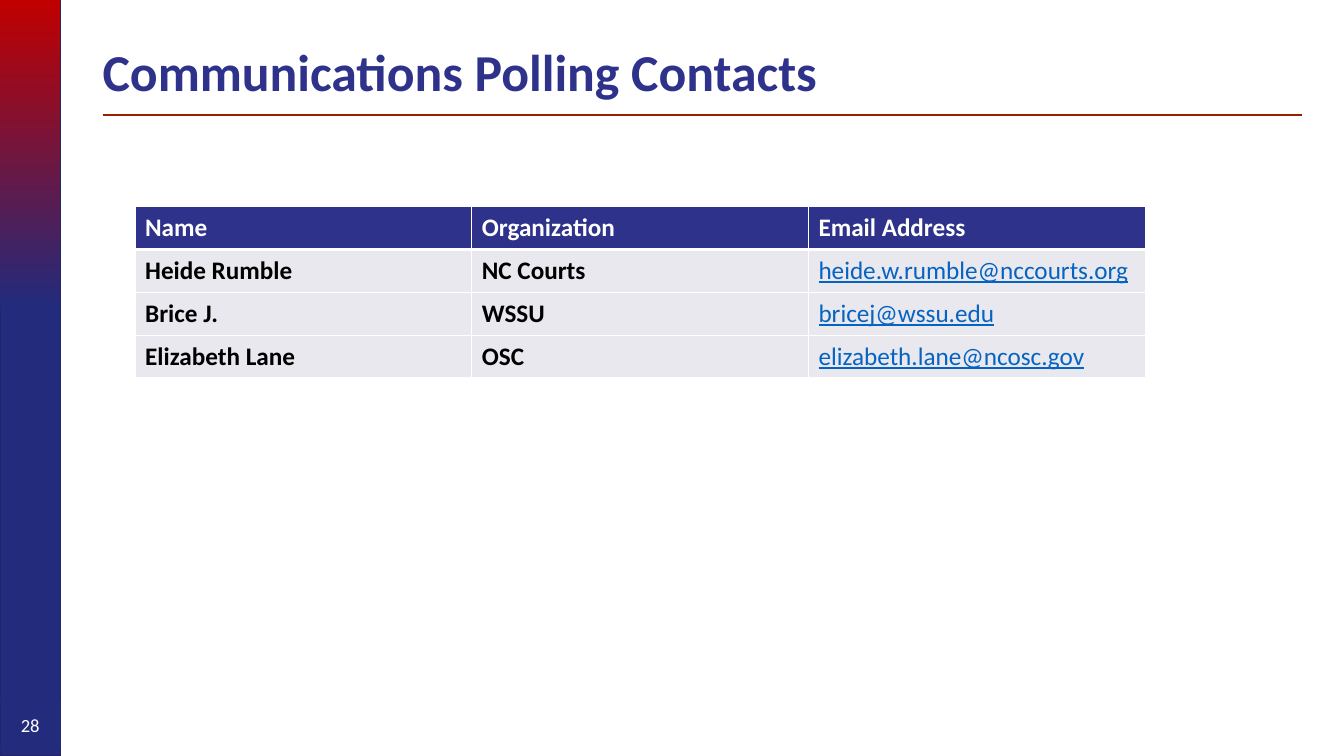
from dataclasses import dataclass
from typing import Any

from lxml.etree import SubElement
from pptx import Presentation
from pptx.dml.color import RGBColor
from pptx.enum.shapes import MSO_CONNECTOR, MSO_SHAPE
from pptx.enum.text import MSO_ANCHOR, PP_ALIGN
from pptx.oxml.ns import qn
from pptx.util import Pt

FONT = "Calibri"
WHITE, BLACK = "FFFFFF", "000000"
NAVY, BLUE, EDGE = "232B7C", "2E328B", "222567"
RED, RUST, LINK, GREY = "C00000", "972200", "0563C1", "E8E8EE"
BAR = 43.2

TITLE = {"name": FONT, "size": Pt(37), "bold": True}
BOLD = {"name": FONT, "size": Pt(18), "bold": True}
MAIL = {"name": FONT, "size": Pt(18), "bold": False, "underline": True}
PAGE = {"name": FONT, "size": Pt(13.3)}

ROWS = [
    ("Name", "Organization", "Email Address"),
    ("Heide Rumble", "NC Courts", "heide.w.rumble@nccourts.org"),
    ("Brice J.", "WSSU", "bricej@wssu.edu"),
    ("Elizabeth Lane", "OSC", "elizabeth.lane@ncosc.gov"),
]


@dataclass
class Block:
    top: float
    height: float
    fills: tuple[str, ...] = ()
    line: str = ""
    width: float = 1


BLOCKS = [
    Block(0, 540, (NAVY,), EDGE),
    Block(0, 218.9, (RED, NAVY)),
    Block(501.1, 33.8, (), NAVY, 0.75),
]


def tint(code: str) -> RGBColor:
    return RGBColor.from_string(code)


def apply(thing: Any, form: dict[str, Any]) -> None:
    for key, value in form.items():
        setattr(thing, key, value)


def write(frame: Any, text: str, form: dict[str, Any], hue: str) -> Any:
    para = frame.paragraphs[0]
    run = para.add_run()
    run.text = text
    apply(run.font, form)
    run.font.color.rgb = tint(hue)
    return para


def draw_block(slide: Any, block: Block) -> Any:
    shape = slide.shapes.add_shape(
        MSO_SHAPE.RECTANGLE, 0, Pt(block.top), Pt(BAR), Pt(block.height))
    shape.shadow.inherit = False
    if len(block.fills) > 1:
        shape.fill.gradient()
        shape.fill.gradient_angle = 270
        for stop, hue in zip(shape.fill.gradient_stops, block.fills):
            stop.color.rgb = tint(hue)
    elif block.fills:
        shape.fill.solid()
        shape.fill.fore_color.rgb = tint(block.fills[0])
    else:
        shape.fill.background()
    if block.line:
        shape.line.color.rgb = tint(block.line)
        shape.line.width = Pt(block.width)
    else:
        shape.line.fill.background()
    return shape


def draw_title(slide: Any) -> None:
    rule = slide.shapes.add_connector(
        MSO_CONNECTOR.STRAIGHT, Pt(73.4), Pt(82.1), Pt(930.2), Pt(82.1))
    rule.line.color.rgb = tint(RUST)
    rule.line.width = Pt(1.5)
    SubElement(rule._element.spPr, qn("a:effectLst"))

    box = slide.shapes.add_textbox(Pt(66.2), Pt(28.8), Pt(864), Pt(49.7))
    frame = box.text_frame
    apply(frame, {"word_wrap": True, "vertical_anchor": MSO_ANCHOR.MIDDLE})
    para = write(frame, "Communications Polling Contacts", TITLE, BLUE)
    para.line_spacing = 0.9


def draw_edge(cell: Any, side: str, width: float) -> None:
    line = SubElement(cell._tc.get_or_add_tcPr(), qn(f"a:ln{side}"),
                      w=str(Pt(width)))
    fill = SubElement(line, qn("a:solidFill"))
    SubElement(fill, qn("a:srgbClr"), val=WHITE)


def draw_cell(cell: Any, text: str, row: int, col: int) -> None:
    head = row == 0
    mail = col == 2 and not head
    widths = {"L": 1, "R": 1, "T": 3 if row == 1 else 1, "B": 3 if head else 1}
    for side, width in widths.items():
        draw_edge(cell, side, width)
    cell.fill.solid()
    cell.fill.fore_color.rgb = tint(BLUE if head else GREY)
    cell.vertical_anchor = MSO_ANCHOR.MIDDLE
    hue = WHITE if head else LINK if mail else BLACK
    write(cell.text_frame, text, MAIL if mail else BOLD, hue)


def draw_table(slide: Any) -> None:
    table = slide.shapes.add_table(
        len(ROWS), 3, Pt(96.5), Pt(147.6), Pt(721.5), Pt(122.4)).table
    table.horz_banding = False
    for col in table.columns:
        col.width = Pt(240.5)
    for row, texts in enumerate(ROWS):
        table.rows[row].height = Pt(30.6)
        for col, text in enumerate(texts):
            draw_cell(table.cell(row, col), text, row, col)


def main() -> None:
    deck = Presentation()
    apply(deck, {"slide_width": Pt(960), "slide_height": Pt(540)})
    slide = deck.slides.add_slide(deck.slide_layouts[6])
    shapes = [draw_block(slide, block) for block in BLOCKS]
    frame = shapes[-1].text_frame
    frame.vertical_anchor = MSO_ANCHOR.MIDDLE
    para = write(frame, "28", PAGE, WHITE)
    apply(para, {"alignment": PP_ALIGN.CENTER, "space_after": Pt(6)})
    draw_title(slide)
    draw_table(slide)
    deck.save("out.pptx")


if __name__ == "__main__":
    main()
